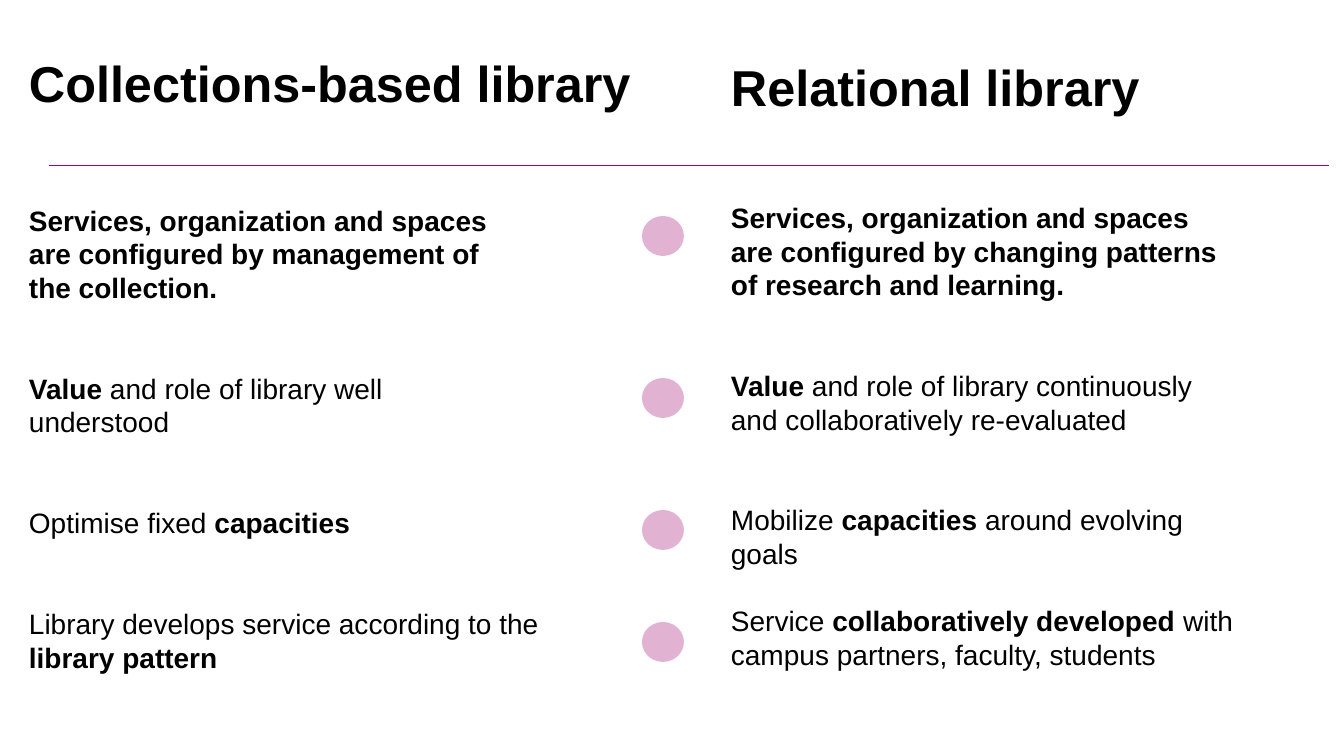
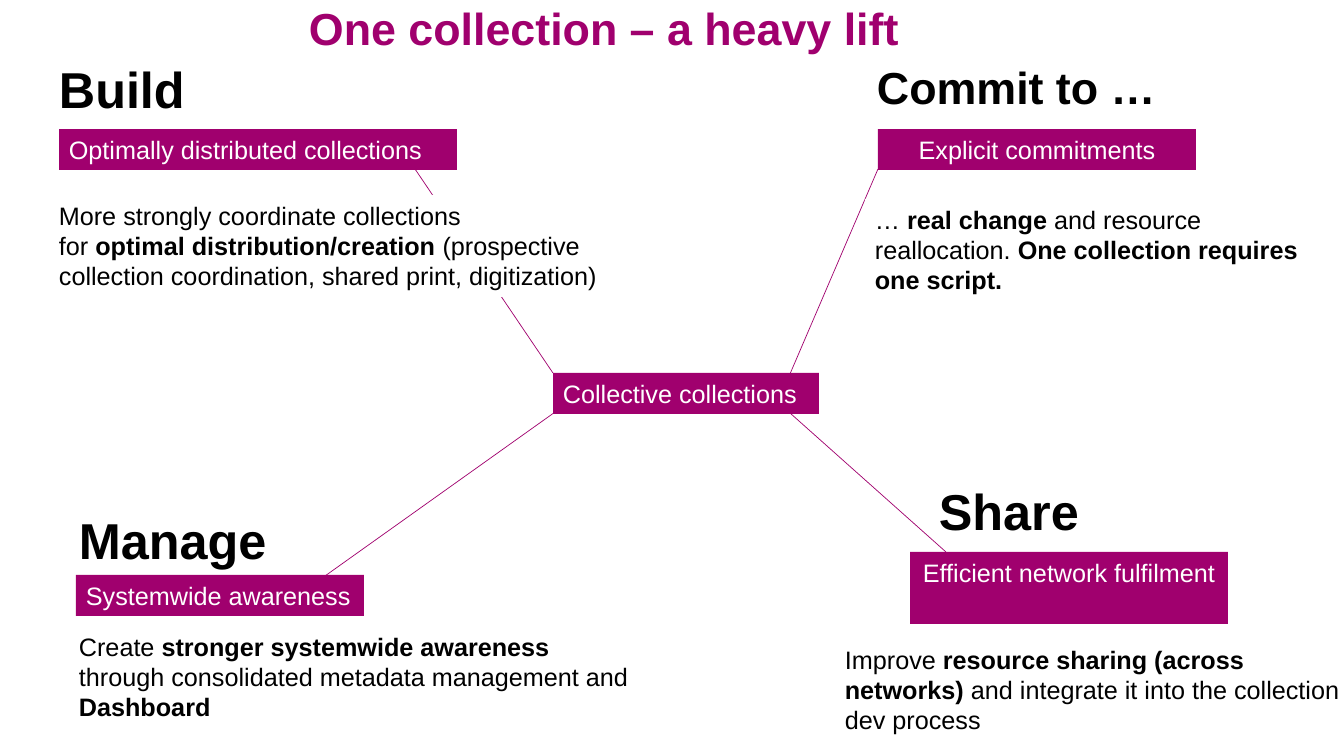
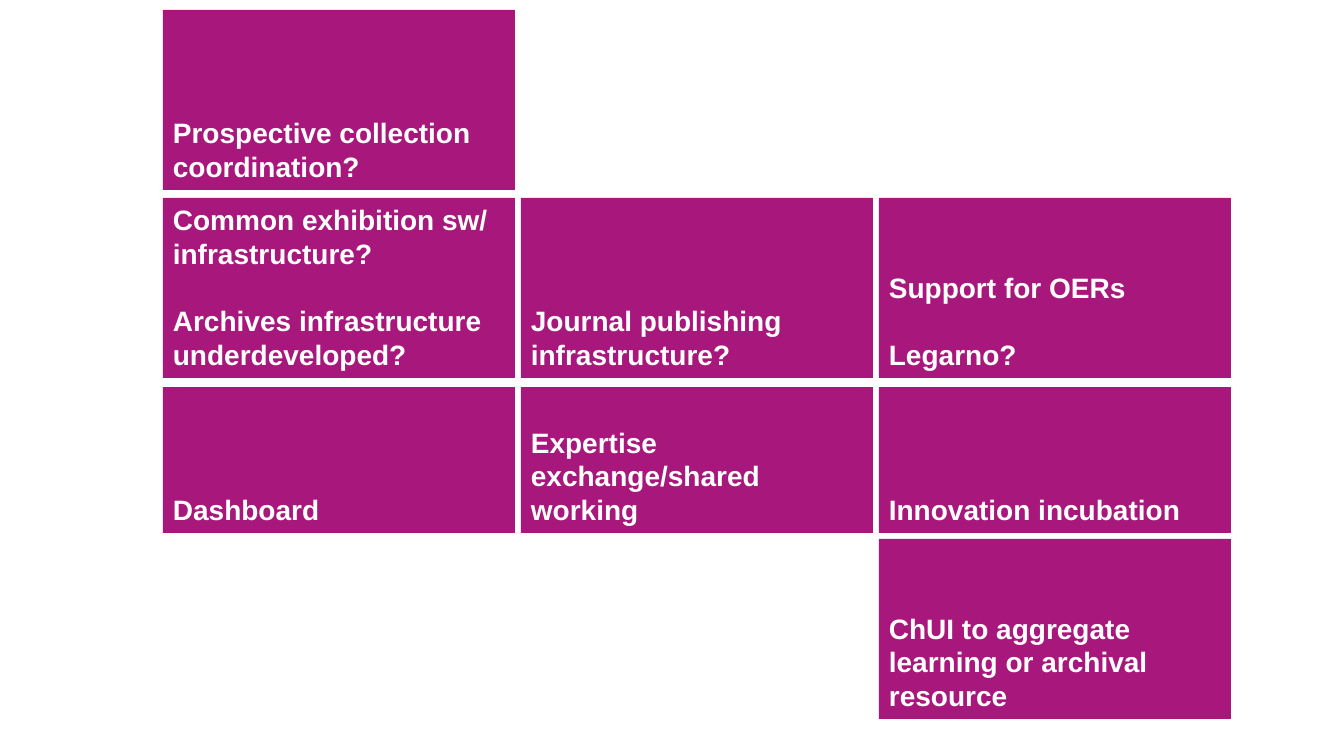
"""Build three slides comparing library models and mapping a collective collection."""
from dataclasses import dataclass

import lxml.etree
import pptx
import pptx.dml.color
import pptx.enum.shapes
import pptx.enum.text
import pptx.oxml.ns
import pptx.util

EMU_PER_PX = 914400 / 100.8
FONT = "Arial"
LINE_HEIGHT = 1.2
COLORS = {"plum": "A0006E", "black": "000000", "white": "FFFFFF"}
RECTANGLE = pptx.enum.shapes.MSO_SHAPE.RECTANGLE
OVAL = pptx.enum.shapes.MSO_SHAPE.OVAL
TOP = pptx.enum.text.MSO_ANCHOR.TOP
BOTTOM = pptx.enum.text.MSO_ANCHOR.BOTTOM
LEFT = pptx.enum.text.PP_ALIGN.LEFT
CENTER = pptx.enum.text.PP_ALIGN.CENTER


@dataclass(frozen=True)
class Box:
    left: int
    top: int
    width: int
    height: int


@dataclass(frozen=True)
class Block:
    text: str
    size: int = 20
    gap: float = 0


@dataclass(frozen=True)
class Label:
    box: Box
    block: Block
    align: pptx.enum.text.PP_ALIGN = LEFT


@dataclass(frozen=True)
class Line:
    start: tuple[int, int]
    end: tuple[int, int]


@dataclass(frozen=True)
class Card:
    column: int
    row: int
    texts: tuple[str, ...]


COLUMNS = (
    (Box(19, 47, 672, 650), (
        Block("**Collections-based library**", 36),
        Block("**Services, organization and spaces\nare configured by management of\n"
              "the collection.**", gap=64.8),
        Block("**Value** and role of library well\nunderstood", gap=48),
        Block("Optimise fixed **capacities**", gap=48),
        Block("Library develops service according to the\n**library pattern**", gap=48),
    )),
    (Box(721, 51, 620, 650), (
        Block("**Relational library**", 36),
        Block("**Services, organization and spaces\nare configured by changing patterns\n"
              "of research and learning.**", gap=60),
        Block("**Value** and role of library continuously\n"
              "and collaboratively re-evaluated", gap=48),
        Block("Mobilize **capacities** around evolving\ngoals", gap=48),
        Block("Service **collaboratively developed** with\n"
              "campus partners, faculty, students", gap=24),
    )),
)
HEADER_RULE = Line((49, 165), (1329, 165))
DOT_TOPS = (216, 378, 510, 622)

LIFT_TITLE = Label(Box(299, -4, 620, 65), Block("**One collection – a heavy lift**", 32))
HEADINGS = (
    Label(Box(49, 53, 204, 72), Block("**Build**", 36)),
    Label(Box(867, 55, 318, 65), Block("**Commit to …**", 32)),
    Label(Box(69, 504, 231, 72), Block("**Manage**", 36)),
    Label(Box(929, 475, 204, 72), Block("**Share**", 36)),
)
TAGS = (
    Label(Box(59, 129, 398, 41), Block("Optimally distributed collections", 18)),
    Label(Box(878, 129, 318, 41), Block("Explicit commitments", 18), CENTER),
    Label(Box(76, 575, 288, 41), Block("Systemwide awareness", 18)),
    Label(Box(910, 552, 318, 72), Block("Efficient network fulfilment", 18), CENTER),
    Label(Box(553, 373, 266, 41), Block("Collective collections", 18)),
)
SPOKES = (
    Line((415, 169), (553, 373)),
    Line((878, 169), (790, 374)),
    Line((558, 410), (325, 576)),
    Line((790, 413), (946, 552)),
)
NOTES = (
    Label(Box(49, 195, 672, 102), Block(
        "More strongly coordinate collections\nfor **optimal distribution/creation** (prospective\n"
        "collection coordination, shared print, digitization)", 18)),
    Label(Box(865, 199, 446, 102), Block(
        "… **real change** and resource reallocation. "
        "**One collection requires one script.**", 18)),
    Label(Box(69, 626, 672, 102), Block(
        "Create **stronger systemwide awareness**\n"
        "through consolidated metadata management and **Dashboard**", 18)),
    Label(Box(835, 639, 527, 102), Block(
        "Improve **resource sharing (across networks)** and integrate it into "
        "the collection dev process", 18)),
)

CARD_LEFT, CARD_WIDTH, CARD_PITCH = 163, 352, 358
CARD_ROWS = ((10, 180), (198, 180), (387, 146), (539, 180))
CARDS = (
    Card(0, 0, ("Prospective collection coordination?",)),
    Card(0, 1, ("Common exhibition sw/\ninfrastructure?",
                "Archives infrastructure underdeveloped?")),
    Card(1, 1, ("Journal publishing infrastructure?",)),
    Card(2, 1, ("Support for OERs", "Legarno?")),
    Card(0, 2, ("Dashboard",)),
    Card(1, 2, ("Expertise exchange/shared working",)),
    Card(2, 2, ("Innovation incubation",)),
    Card(2, 3, ("ChUI to aggregate learning or archival resource",)),
)


def px(length: int) -> pptx.util.Emu:
    return pptx.util.Emu(round(length * EMU_PER_PX))


def rgb(color: str) -> pptx.dml.color.RGBColor:
    return pptx.dml.color.RGBColor.from_string(COLORS[color])


def place(box: Box) -> tuple[pptx.util.Emu, ...]:
    return px(box.left), px(box.top), px(box.width), px(box.height)


def write(shape, blocks: tuple[Block, ...], color: str, align=LEFT, anchor=TOP) -> None:
    frame = shape.text_frame
    frame.word_wrap = True
    frame.vertical_anchor = anchor
    for index, block in enumerate(blocks):
        paragraph = frame.add_paragraph() if index else frame.paragraphs[0]
        paragraph.alignment = align
        paragraph.line_spacing = pptx.util.Pt(block.size * LINE_HEIGHT)
        paragraph.space_before = pptx.util.Pt(block.gap)
        paragraph.font.name = FONT
        paragraph.font.size = pptx.util.Pt(block.size)
        paragraph.font.color.rgb = rgb(color)
        for part, text in enumerate(block.text.split("**")):
            for line, words in enumerate(text.split("\n")):
                if line:
                    paragraph.add_line_break()
                if words:
                    run = paragraph.add_run()
                    run.text = words
                    run.font.bold = part % 2 == 1


def add_text(slide, box: Box, blocks: tuple[Block, ...], color: str) -> None:
    write(slide.shapes.add_textbox(*place(box)), blocks, color)


def add_filled(slide, kind, box: Box, color: str, opacity: int = 100):
    shape = slide.shapes.add_shape(kind, *place(box))
    shape.shadow.inherit = False
    shape.fill.solid()
    shape.fill.fore_color.rgb = rgb(color)
    shape.line.fill.background()
    if opacity < 100:
        tone = shape.fill._xPr.find(".//" + pptx.oxml.ns.qn("a:srgbClr"))
        alpha = lxml.etree.SubElement(tone, pptx.oxml.ns.qn("a:alpha"))
        alpha.set("val", str(opacity * 1000))
    return shape


def add_label(slide, label: Label, fill: str, color: str) -> None:
    shape = add_filled(slide, RECTANGLE, label.box, fill)
    write(shape, (label.block,), color, label.align)


def add_line(slide, line: Line) -> None:
    connector = slide.shapes.add_connector(
        pptx.enum.shapes.MSO_CONNECTOR.STRAIGHT, *map(px, line.start + line.end))
    connector.line.color.rgb = rgb("plum")
    connector.line.width = pptx.util.Pt(0.5)
    lxml.etree.SubElement(connector._element.spPr, pptx.oxml.ns.qn("a:effectLst"))


def build_comparison(slide) -> None:
    for box, blocks in COLUMNS:
        add_text(slide, box, blocks, "black")
    add_line(slide, HEADER_RULE)
    for top in DOT_TOPS:
        add_filled(slide, OVAL, Box(642, top, 42, 40), "plum", 30)


def build_heavy_lift(slide) -> None:
    for heading in HEADINGS:
        add_label(slide, heading, "white", "black")
    for tag in TAGS:
        add_label(slide, tag, "plum", "white")
    for spoke in SPOKES:
        add_line(slide, spoke)
    for note in NOTES:
        add_label(slide, note, "white", "black")
    add_text(slide, LIFT_TITLE.box, (LIFT_TITLE.block,), "plum")


def build_cards(slide) -> None:
    for card in CARDS:
        top, height = CARD_ROWS[card.row]
        box = Box(CARD_LEFT + card.column * CARD_PITCH, top, CARD_WIDTH, height)
        shape = add_filled(slide, RECTANGLE, box, "plum", 91)
        blocks = tuple(Block(f"**{text}**", gap=24 if index else 0)
                       for index, text in enumerate(card.texts))
        write(shape, blocks, "white", anchor=BOTTOM)
        shape.text_frame.margin_bottom = px(7)


def main() -> None:
    presentation = pptx.Presentation()
    presentation.slide_width = px(1344)
    presentation.slide_height = px(756)
    for build in (build_comparison, build_heavy_lift, build_cards):
        build(presentation.slides.add_slide(presentation.slide_layouts[6]))
    presentation.save("out.pptx")


if __name__ == "__main__":
    main()
